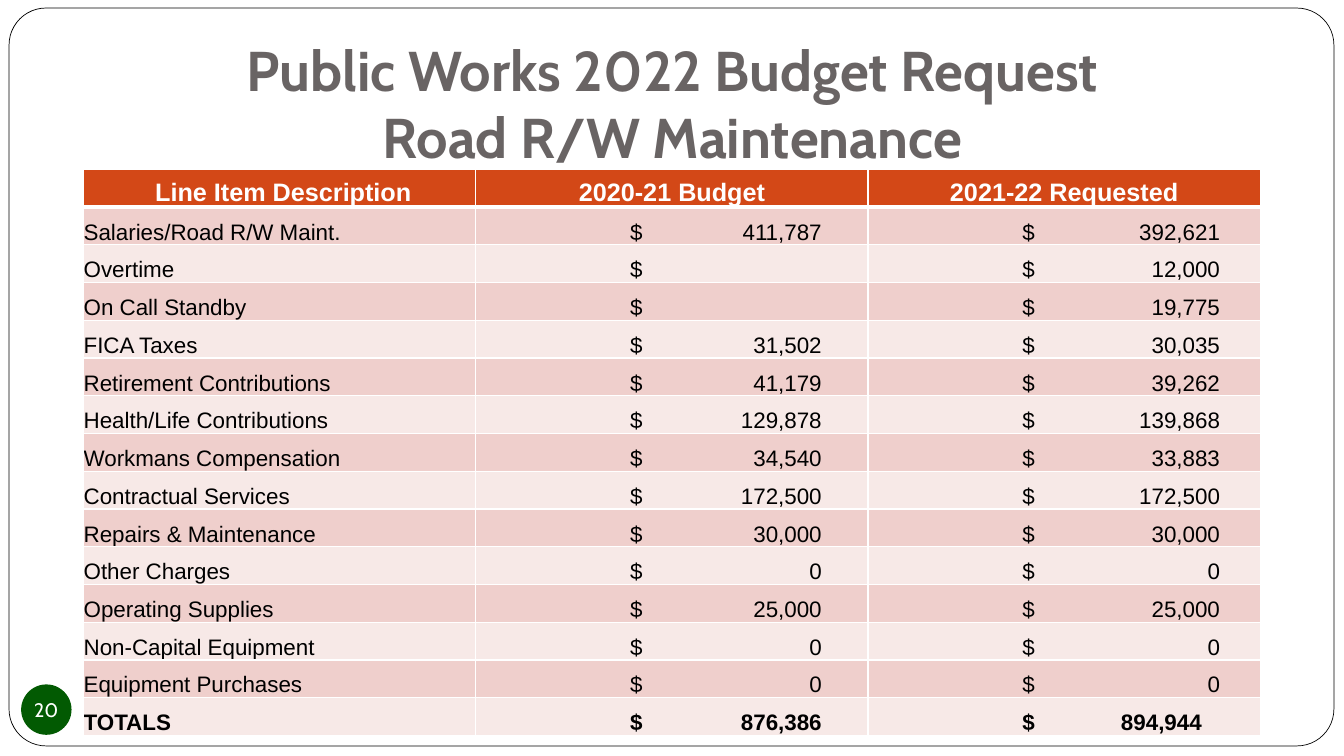
import dataclasses

import lxml.etree
import pptx
import pptx.chart.data
import pptx.dml.color
import pptx.enum.shapes
import pptx.enum.text
import pptx.oxml.ns
import pptx.util

Inches = pptx.util.Inches
ALIGN = pptx.enum.text.PP_ALIGN
ANCHOR = pptx.enum.text.MSO_ANCHOR
SHAPE = pptx.enum.shapes.MSO_SHAPE


@dataclasses.dataclass(frozen=True)
class Theme:
    white: str = "FFFFFF"
    black: str = "000000"
    gray: str = "696464"
    green: str = "025A02"
    orange: str = "D34817"
    bands: tuple = ("EFCFCC", "F7E9E7")
    display: str = "Cabin"
    body: str = "Arial"
    title: int = 40
    head: int = 18
    cell: int = 16
    badge: int = 14


THEME = Theme()
TITLE = ("Public Works 2022 Budget Request", "Road R/W Maintenance")
HEADS = ("Line Item Description", "2020-21 Budget", "2021-22 Requested")
ITEMS = (
    ("Salaries/Road R/W Maint.", "411,787", "392,621"),
    ("Overtime", "", "12,000"),
    ("On Call Standby", "", "19,775"),
    ("FICA Taxes", "31,502", "30,035"),
    ("Retirement Contributions", "41,179", "39,262"),
    ("Health/Life Contributions", "129,878", "139,868"),
    ("Workmans Compensation", "34,540", "33,883"),
    ("Contractual Services", "172,500", "172,500"),
    ("Repairs & Maintenance", "30,000", "30,000"),
    ("Other Charges", "0", "0"),
    ("Operating Supplies", "25,000", "25,000"),
    ("Non-Capital Equipment", "0", "0"),
    ("Equipment Purchases", "0", "0"),
)
TOTALS = ("TOTALS", "876,386", "894,944")
DOLLAR = 1.53
EDGES = (3.43, 3.49)
TOTAL_EDGES = (3.43, 3.31)


def paint(color):
    return pptx.dml.color.RGBColor.from_string(color)


def add_run(para, text, size, color, face, bold=False):
    run = para.add_run()
    run.text = text
    run.font.size = pptx.util.Pt(size)
    run.font.name = face
    run.font.bold = bold
    run.font.color.rgb = paint(color)


def set_insets(frame, left, top, right, bottom):
    frame.margin_left = Inches(left)
    frame.margin_top = Inches(top)
    frame.margin_right = Inches(right)
    frame.margin_bottom = Inches(bottom)


def add_block(slide, kind, box, fill):
    block = slide.shapes.add_shape(kind, *map(Inches, box))
    block.shadow.inherit = False
    block.fill.solid()
    block.fill.fore_color.rgb = paint(fill)
    block.line.fill.background()
    return block


def add_panel(slide):
    panel = add_block(slide, SHAPE.ROUNDED_RECTANGLE,
                      (0.09, 0.08, 13.14, 7.32), THEME.white)
    panel.adjustments[0] = 0.05
    panel.line.color.rgb = paint(THEME.black)
    panel.line.width = pptx.util.Pt(0.5)


def add_title(slide):
    title = slide.shapes.title
    slide.shapes._spTree.append(title._element)
    title.left, title.top = Inches(2.17), Inches(0.3)
    title.width, title.height = Inches(9), Inches(1.25)
    frame = title.text_frame
    frame.word_wrap = True
    frame.auto_size = pptx.enum.text.MSO_AUTO_SIZE.NONE
    frame.vertical_anchor = ANCHOR.TOP
    set_insets(frame, 0.1, 0.05, 0.1, 0.1)
    para = frame.paragraphs[0]
    para.alignment = ALIGN.CENTER
    for index, line in enumerate(TITLE):
        if index:
            para.add_line_break()
        add_run(para, line, THEME.title, THEME.gray, THEME.display, True)


def add_tabs(para, stops):
    tag = pptx.oxml.ns.qn
    tabs = lxml.etree.SubElement(para._p.get_or_add_pPr(), tag("a:tabLst"))
    for place, side in stops:
        lxml.etree.SubElement(tabs, tag("a:tab"),
                              pos=str(Inches(place)), algn=side)


def add_borders(cell, base):
    tag = pptx.oxml.ns.qn
    props = cell._tc.get_or_add_tcPr()
    for side, width in (("L", 1), ("R", 1), ("T", 1), ("B", base)):
        line = lxml.etree.SubElement(props, tag("a:ln" + side),
                                     w=str(pptx.util.Pt(width)))
        fill = lxml.etree.SubElement(line, tag("a:solidFill"))
        lxml.etree.SubElement(fill, tag("a:srgbClr"), val=THEME.white)


def style_cell(cell, fill, base=1):
    add_borders(cell, base)
    cell.fill.solid()
    cell.fill.fore_color.rgb = paint(fill)
    cell.vertical_anchor = ANCHOR.BOTTOM
    set_insets(cell, 0, 0, 0, 0)
    return cell.text_frame.paragraphs[0]


def fill_head(table):
    for col, text in enumerate(HEADS):
        cell = table.cell(0, col)
        para = style_cell(cell, THEME.orange, 3)
        set_insets(cell, 0.01 if col else 0.08, 0.01, 0.01, 0)
        para.alignment = ALIGN.CENTER
        add_run(para, text, THEME.head, THEME.white, THEME.body, True)


def fill_row(table, row, item, edges, bold=False):
    for col, text in enumerate(item):
        para = style_cell(table.cell(row, col), THEME.bands[(row - 1) % 2])
        para.alignment = ALIGN.LEFT
        if col:
            add_tabs(para, ((DOLLAR, "l"), (edges[col - 1], "r")))
            text = "\t$\t" + text if text else "\t$"
        add_run(para, text, THEME.cell, THEME.black, THEME.body, bold)


def add_budget(slide):
    count = len(ITEMS) + 2
    frame = slide.shapes.add_table(count, len(HEADS), Inches(0.83),
                                   Inches(1.68), Inches(11.67), Inches(5.62))
    table = frame.table
    table.horz_banding = False
    fill_head(table)
    for row, item in enumerate(ITEMS, 1):
        fill_row(table, row, item, EDGES)
    fill_row(table, count - 1, TOTALS, TOTAL_EDGES, True)


def add_badge(slide):
    badge = add_block(slide, SHAPE.OVAL, (0.21, 6.79, 0.5, 0.5), THEME.green)
    frame = badge.text_frame
    frame.word_wrap = False
    frame.vertical_anchor = ANCHOR.MIDDLE
    set_insets(frame, 0, 0, 0, 0)
    para = frame.paragraphs[0]
    para.alignment = ALIGN.CENTER
    add_run(para, "20", THEME.badge, THEME.white, THEME.display)


def main():
    deck = pptx.Presentation()
    deck.slide_width, deck.slide_height = Inches(13.33), Inches(7.5)
    slide = deck.slides.add_slide(deck.slide_layouts[5])
    add_panel(slide)
    add_title(slide)
    add_budget(slide)
    add_badge(slide)
    deck.save("out.pptx")


if __name__ == "__main__":
    main()
